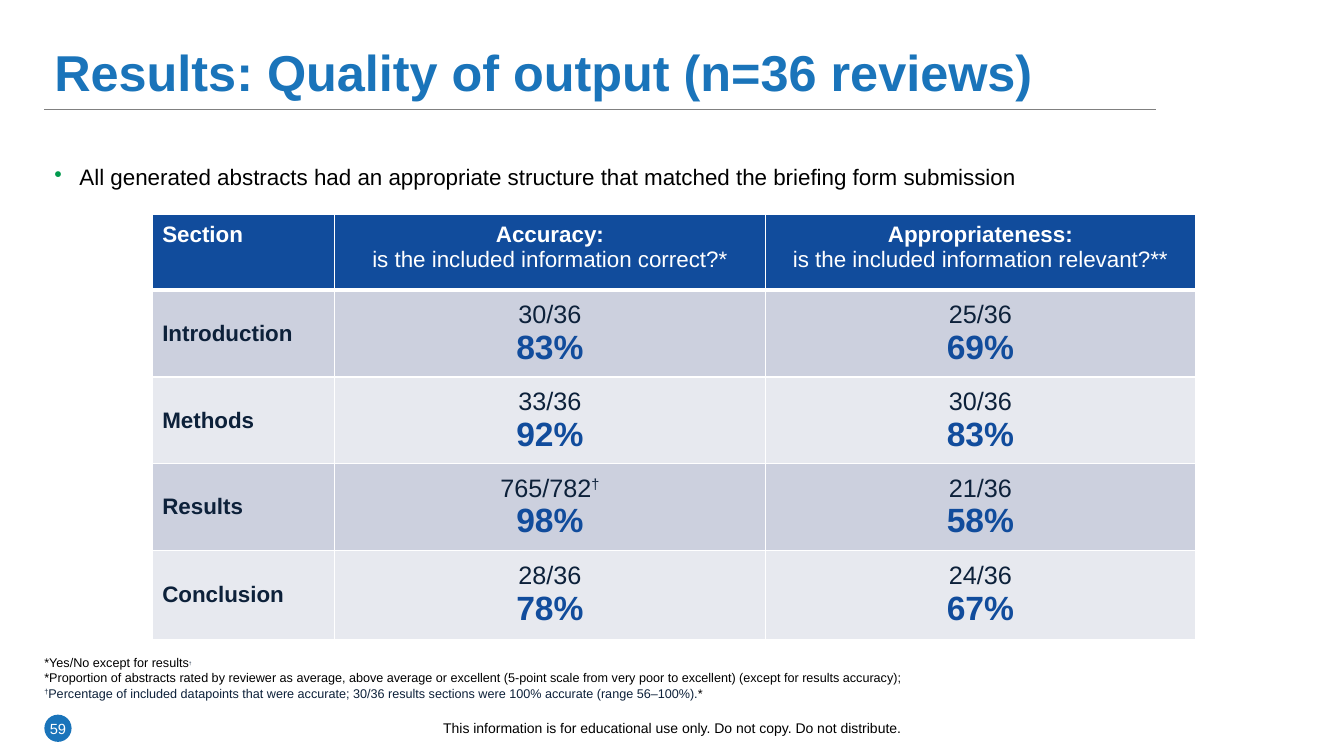
"""Build the slide on output quality: title, key point, score table and footnotes."""
from lxml import etree
from pptx import Presentation
from pptx.dml.color import RGBColor
from pptx.enum.shapes import MSO_CONNECTOR, MSO_SHAPE
from pptx.enum.text import MSO_ANCHOR, PP_ALIGN
from pptx.oxml.ns import qn
from pptx.util import Inches, Pt

LEFT, CENTER = PP_ALIGN.LEFT, PP_ALIGN.CENTER
TOP, MIDDLE, BOTTOM = MSO_ANCHOR.TOP, MSO_ANCHOR.MIDDLE, MSO_ANCHOR.BOTTOM
COLORS = {"blue": "1A74BA", "navy": "114C9C", "ink": "0D213A", "black": "000000",
          "white": "FFFFFF", "green": "009A4D", "rule": "808080",
          "odd": "CCD0DE", "even": "E7E9EF"}
STYLES = {
    "title": {"size": 36, "bold": True, "color": "blue"},
    "point": {"size": 16, "bold": False, "color": "black"},
    "head": {"size": 16, "bold": True, "color": "white"},
    "question": {"size": 16, "bold": False, "color": "white"},
    "section": {"size": 16, "bold": True, "color": "ink"},
    "count": {"size": 18, "bold": False, "color": "ink"},
    "percent": {"size": 24, "bold": True, "color": "navy"},
    "note": {"size": 9, "bold": False, "color": "black"},
    "dark note": {"size": 9, "bold": False, "color": "ink"},
    "tiny": {"size": 6, "bold": False, "color": "ink"},
    "number": {"size": 10.5, "bold": False, "color": "white"},
    "footer": {"size": 10, "bold": False, "color": "black"},
}
TITLE = "Results: Quality of output (n=36 reviews)"
POINT = "All generated abstracts had an appropriate structure that matched the briefing form submission"
HEADINGS = [("Section", ""),
            ("Accuracy:", "is the included information correct?*"),
            ("Appropriateness:", "is the included information relevant?**")]
SCORES = [("Introduction", ("30/36", "83%"), ("25/36", "69%")),
          ("Methods", ("33/36", "92%"), ("30/36", "83%")),
          ("Results", ("765/782†", "98%"), ("21/36", "58%")),
          ("Conclusion", ("28/36", "78%"), ("24/36", "67%"))]
FOOTNOTES = [
    [("*Yes/No except for results", "note"), ("†", "tiny")],
    [("*Proportion of abstracts rated by reviewer as average, above average or excellent "
      "(5-point scale from very poor to excellent) (except for results accuracy);", "note")],
    [("†Percentage of included datapoints that were accurate; 30/36 results sections "
      "were 100% accurate (range 56–100%).", "dark note"), ("*", "note")],
]
PAGE_NUMBER = "59"
FOOTER = "This information is for educational use only. Do not copy. Do not distribute."

WIDTH, HEIGHT, MARGIN = 13.33, 7.5, 0.44
CONTENT_WIDTH, FOOTER_TOP, DOT = 12.17, 7.09, 0.27
TABLE_LEFT, TABLE_TOP = 1.51, 2.13
COLUMNS = [1.81, 4.27, 4.27]
ROWS = [0.75, 0.83, 0.83, 0.83, 0.88]


def rgb(name):
    return RGBColor.from_string(COLORS[name])


def add_span(para, text, style):
    for piece in text.replace("†", "|†|").split("|"):
        if not piece:
            continue
        span = para.add_run()
        span.text = piece
        look = STYLES[style]
        for name, value in {"name": "Arial", "size": Pt(look["size"]), "bold": look["bold"]}.items():
            setattr(span.font, name, value)
        span.font.color.rgb = rgb(look["color"])
        if piece == "†":
            span.font._element.set("baseline", "30000")


def write(frame, lines, align=LEFT):
    for index, line in enumerate(lines):
        para = frame.add_paragraph() if index else frame.paragraphs[0]
        para.alignment = align
        for text, style in line:
            add_span(para, text, style)


def add_text(page, place, lines, align=LEFT, anchor=TOP, inset=True):
    box = page.shapes.add_textbox(*[Inches(length) for length in place])
    frame = box.text_frame
    frame.word_wrap = True
    frame.vertical_anchor = anchor
    if not inset:
        for side in ("left", "top", "right", "bottom"):
            setattr(frame, f"margin_{side}", 0)
    write(frame, lines, align)
    return frame.paragraphs[0]


def add_bullet(para):
    properties = para._p.get_or_add_pPr()
    properties.set("marL", str(Inches(0.25)))
    properties.set("indent", str(-Inches(0.25)))
    color = etree.SubElement(properties, qn("a:buClr"))
    etree.SubElement(color, qn("a:srgbClr"), val=COLORS["green"])
    etree.SubElement(properties, qn("a:buChar"), char="•")


def style_cell(cell, fill, anchor, bottom):
    properties = cell._tc.get_or_add_tcPr()
    for side, points in {"L": 1, "R": 1, "T": 1, "B": bottom}.items():
        border = etree.SubElement(properties, qn(f"a:ln{side}"), w=str(Pt(points)))
        paint = etree.SubElement(border, qn("a:solidFill"))
        etree.SubElement(paint, qn("a:srgbClr"), val=COLORS["white"])
    cell.fill.solid()
    cell.fill.fore_color.rgb = rgb(fill)
    cell.vertical_anchor = anchor
    cell.margin_top = cell.margin_bottom = Inches(0.08)


def add_scores(page):
    table = page.shapes.add_table(
        len(ROWS), len(COLUMNS), Inches(TABLE_LEFT), Inches(TABLE_TOP),
        Inches(sum(COLUMNS)), Inches(sum(ROWS))).table
    for column, width in zip(table.columns, COLUMNS):
        column.width = Inches(width)
    for row, height in zip(table.rows, ROWS):
        row.height = Inches(height)
    for column, (heading, question) in enumerate(HEADINGS):
        cell = table.cell(0, column)
        style_cell(cell, "navy", TOP, 3)
        write(cell.text_frame, [[(heading, "head")]], CENTER if column else LEFT)
        if question:
            para = cell.text_frame.paragraphs[0]
            para.space_after = Pt(6)
            para.add_line_break()
            etree.SubElement(para._p[-1], qn("a:rPr"), sz="1600")
            add_span(para, question, "question")
    for row, (section, *results) in enumerate(SCORES, 1):
        contents = [[[(section, "section")]]]
        contents += [[[(count, "count")], [(percent, "percent")]] for count, percent in results]
        for column, lines in enumerate(contents):
            cell = table.cell(row, column)
            style_cell(cell, "odd" if row % 2 else "even", MIDDLE, 1)
            write(cell.text_frame, lines, CENTER if column else LEFT)


def main():
    deck = Presentation()
    deck.slide_width, deck.slide_height = Inches(WIDTH), Inches(HEIGHT)
    page = deck.slides.add_slide(deck.slide_layouts[6])

    dot = page.shapes.add_shape(MSO_SHAPE.OVAL, Inches(MARGIN), Inches(FOOTER_TOP),
                                Inches(DOT), Inches(DOT))
    dot.shadow.inherit = False
    dot.fill.solid()
    dot.fill.fore_color.rgb = rgb("blue")
    dot.line.fill.background()

    rule = page.shapes.add_connector(MSO_CONNECTOR.STRAIGHT, Inches(MARGIN), Inches(1.09),
                                     Inches(11.47), Inches(1.09))
    rule.line.color.rgb = rgb("rule")
    rule.line.width = Pt(0.5)
    etree.SubElement(rule._element.spPr, qn("a:effectLst"))

    title = add_text(page, (MARGIN, 0.21, CONTENT_WIDTH, 1.07), [[(TITLE, "title")]], anchor=MIDDLE)
    title.line_spacing = 0.9
    add_text(page, (MARGIN + DOT / 2 - 0.29, FOOTER_TOP, 0.58, 0.4),
             [[(PAGE_NUMBER, "number")]], CENTER)
    point = add_text(page, (MARGIN, 1.6, CONTENT_WIDTH, 0.4), [[(POINT, "point")]])
    add_bullet(point)
    point.line_spacing = 0.9
    add_scores(page)
    add_text(page, (MARGIN, 6.5, 11.77, 0.45), FOOTNOTES, anchor=BOTTOM, inset=False)
    add_text(page, (0, FOOTER_TOP, WIDTH, 0.4), [[(FOOTER, "footer")]], CENTER)
    deck.save("out.pptx")


if __name__ == "__main__":
    main()
